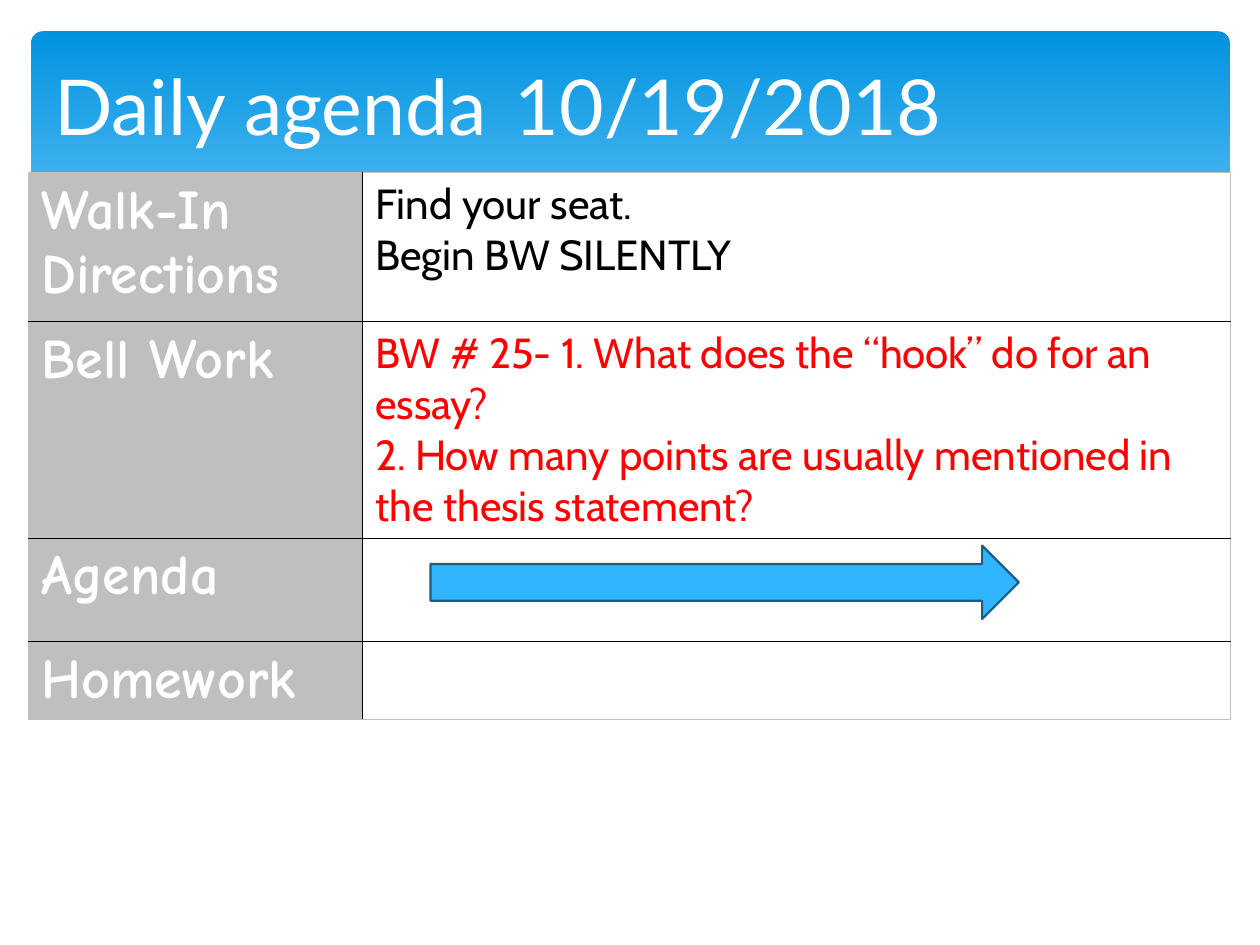
"""Build a daily agenda slide with a header band, a schedule table and an arrow."""
from lxml.etree import SubElement
from pptx import Presentation
from pptx.dml.color import RGBColor as Rgb
from pptx.enum.shapes import MSO_SHAPE as Preset
from pptx.enum.text import MSO_ANCHOR as Anchor
from pptx.oxml.ns import qn
from pptx.util import Cm, Pt

HEADING = "Daily agenda\t 10/19/2018"
AGENDA = [
    ("Walk-In Directions", ["Find your seat.", "Begin BW SILENTLY"], "black", 3.0),
    ("Bell Work", [
        "BW # 25- 1. What does the “hook” do for an essay?",
        "2. How many points are usually mentioned in the thesis statement?",
    ], "red", 4.04),
    ("Agenda", [], "black", 2.08),
    ("Homework", [], "black", 1.57),
]
COLUMN_WIDTHS = (6.73, 17.5)

THEME = {
    "colors": {
        "white": "FFFFFF", "black": "000000", "red": "FF0000", "gray": "BFBFBF",
        "band_top": "0293E0", "band_bottom": "83D3FE",
        "arrow": "31B6FD", "arrow_edge": "195F84",
    },
    "heading": {"font": "Lato", "size": 44, "color": "white"},
    "label": {"font": "Comic Neue", "size": 32, "color": "white", "bold": True},
    "detail": {"font": "Cabin", "size": 24},
}


def color_of(name):
    return Rgb.from_string(THEME["colors"][name])


def write(frame, *lines, font, size, color, bold=False):
    for index, line in enumerate(lines):
        paragraph = frame.paragraphs[0] if index == 0 else frame.add_paragraph()
        run = paragraph.add_run()
        run.text = line
        run.font.name = font
        run.font.size = Pt(size)
        run.font.bold = bold
        run.font.color.rgb = color_of(color)


def draw_borders(cell, edges):
    properties = cell._tc.get_or_add_tcPr()
    for side, (color, points) in edges.items():
        edge = SubElement(properties, qn(f"a:ln{side}"), w=str(Pt(points)))
        fill = SubElement(edge, qn("a:solidFill"))
        SubElement(fill, qn("a:srgbClr"), val=THEME["colors"][color])


def add_band(slide):
    band = slide.shapes.add_shape(
        Preset.ROUNDED_RECTANGLE, Cm(0.63), Cm(0.63), Cm(24.16), Cm(6.86))
    band.adjustments[0] = 0.034
    band.shadow.inherit = False
    band.line.fill.background()
    band.fill.gradient()
    band.fill.gradient_angle = 270
    stops = ((0, "band_top"), (0.9, "band_bottom"))
    for stop, (position, color) in zip(band.fill.gradient_stops, stops):
        stop.position = position
        stop.color.rgb = color_of(color)


def add_agenda(slide):
    heights = [height for *_, height in AGENDA]
    agenda = slide.shapes.add_table(
        len(AGENDA), len(COLUMN_WIDTHS), Cm(0.58), Cm(3.48),
        Cm(sum(COLUMN_WIDTHS)), Cm(sum(heights))).table
    agenda.first_row = agenda.horz_banding = False
    for column, width in zip(agenda.columns, COLUMN_WIDTHS):
        column.width = Cm(width)
    outer, inner = ("gray", 0.5), ("black", 1)
    last = len(AGENDA) - 1
    for index, (label, details, color, height) in enumerate(AGENDA):
        agenda.rows[index].height = Cm(height)
        label_cell, detail_cell = agenda.cell(index, 0), agenda.cell(index, 1)
        top = inner if index else outer
        bottom = inner if index < last else outer
        for cell, fill, left, right in (
            (label_cell, "gray", outer, inner),
            (detail_cell, "white", inner, outer),
        ):
            draw_borders(cell, {"L": left, "R": right, "T": top, "B": bottom})
            cell.fill.solid()
            cell.fill.fore_color.rgb = color_of(fill)
        write(label_cell.text_frame, label, **THEME["label"])
        write(detail_cell.text_frame, *details, color=color, **THEME["detail"])


def add_heading(slide):
    frame = slide.shapes.add_textbox(
        Cm(0.84), Cm(0.84), Cm(23.7), Cm(2.54)).text_frame
    frame.word_wrap = True
    frame.vertical_anchor = Anchor.MIDDLE
    write(frame, HEADING, **THEME["heading"])


def add_arrow(slide):
    arrow = slide.shapes.add_shape(
        Preset.RIGHT_ARROW, Cm(8.68), Cm(11), Cm(11.86), Cm(1.48))
    arrow.shadow.inherit = False
    arrow.fill.solid()
    arrow.fill.fore_color.rgb = color_of("arrow")
    arrow.line.color.rgb = color_of("arrow_edge")
    arrow.line.width = Pt(1.25)


def main():
    deck = Presentation()
    deck.slide_width, deck.slide_height = Cm(25.4), Cm(19.05)
    slide = deck.slides.add_slide(deck.slide_layouts[6])
    for add_part in (add_band, add_agenda, add_heading, add_arrow):
        add_part(slide)
    deck.save("out.pptx")


if __name__ == "__main__":
    main()
